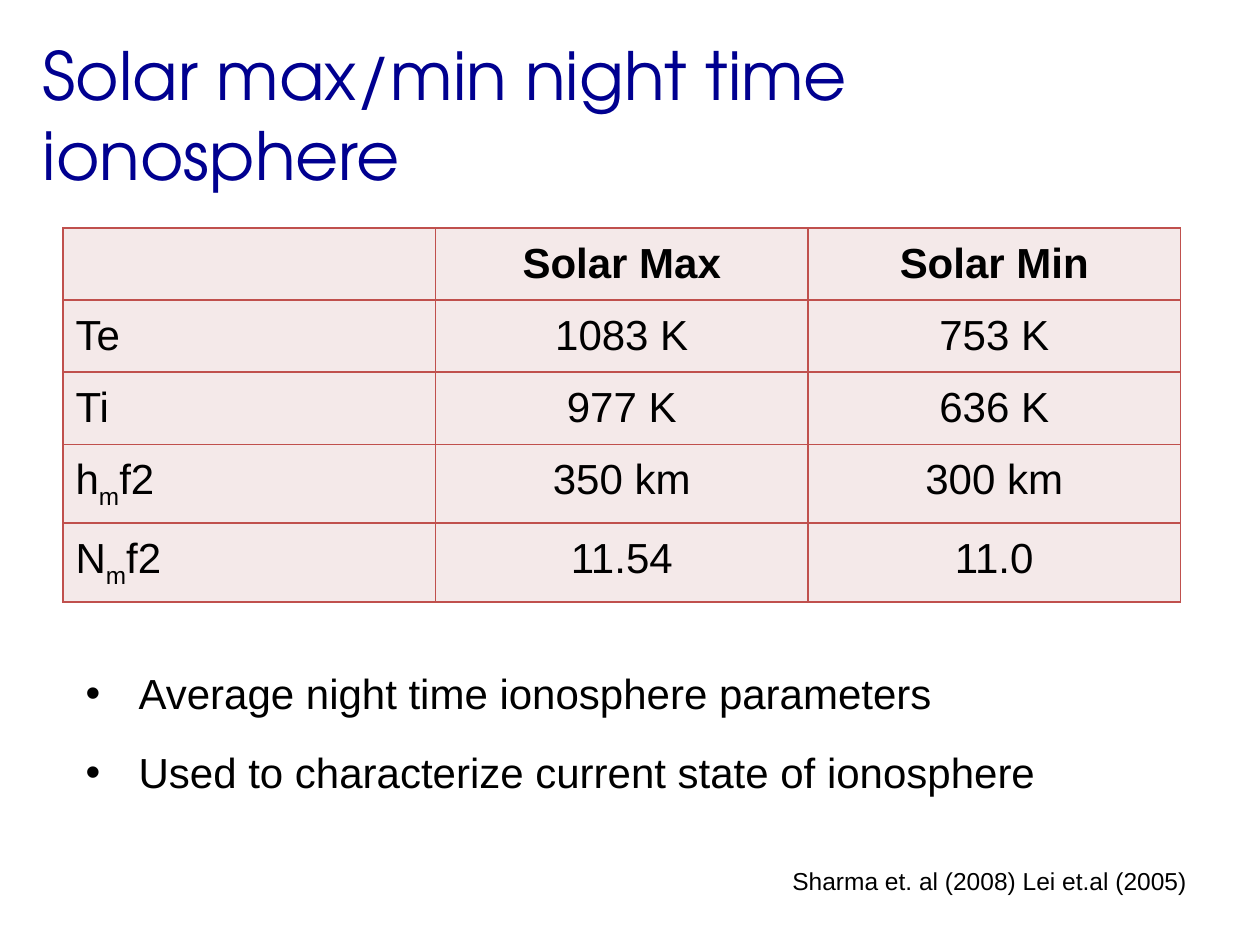
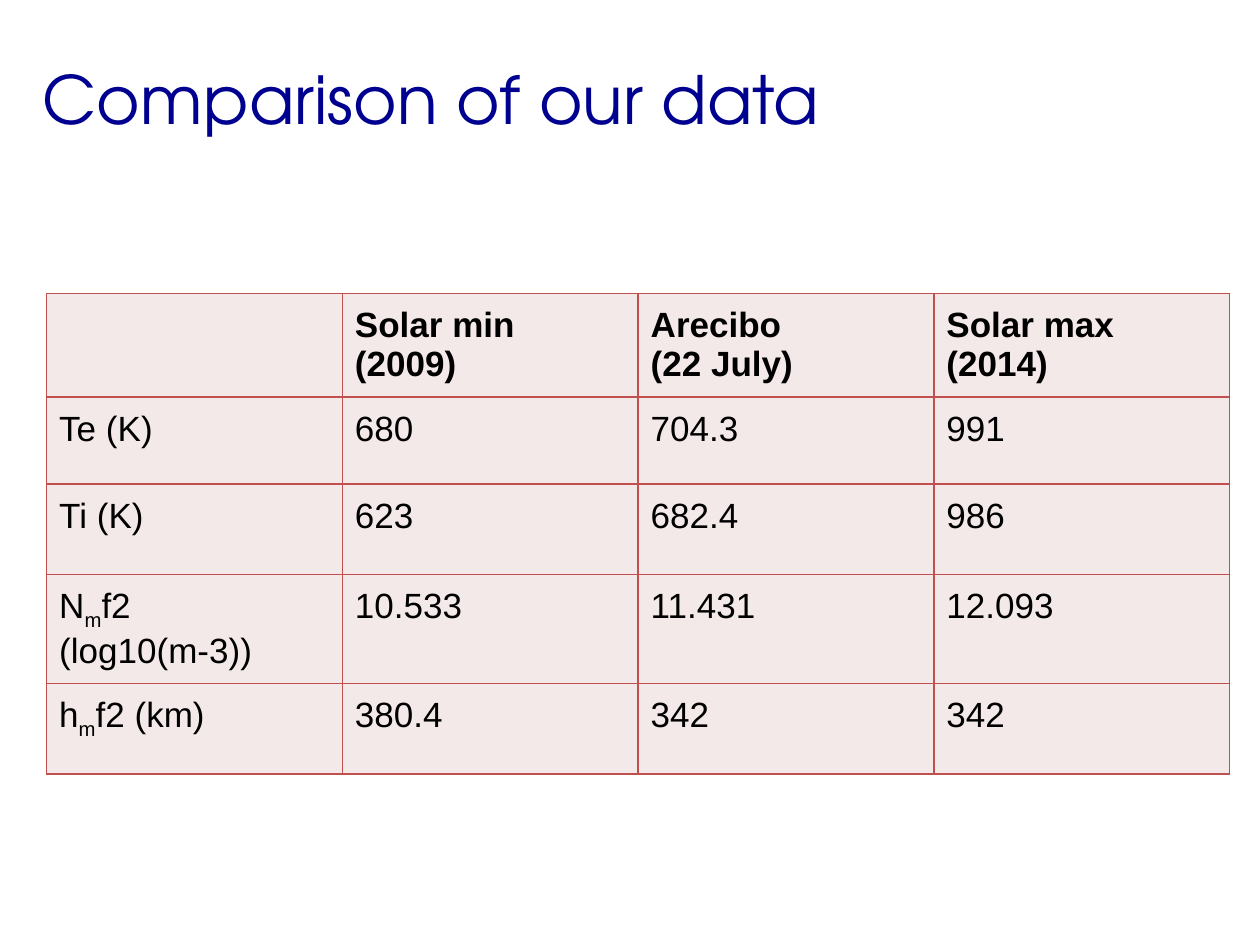
from dataclasses import dataclass

from lxml import etree
from pptx import Presentation
from pptx.dml.color import RGBColor
from pptx.enum import text as t
from pptx.oxml import ns
from pptx.util import Inches, Pt


@dataclass(frozen=True)
class Theme:
    ink: str = "000000"
    title_ink: str = "000090"
    rule: str = "C0504D"
    cell: str = "F4E9E9"
    title_font: str = "TeX Gyre Adventor"
    body_font: str = "Arial"
    title_size: int = 38
    list_size: int = 24
    note_size: int = 14
    inset: float = 0.1
    rule_width: float = 1


THEME = Theme()
LEFT, CENTER = t.PP_ALIGN.LEFT, t.PP_ALIGN.CENTER


# Shared helpers
def assign(target, values):
    for name, value in values.items():
        setattr(target, name, value)


def add_tag(parent, tag, **attributes):
    return etree.SubElement(parent, ns.qn(tag), attributes)


def place(shape, box):
    names = ("left", "top", "width", "height")
    assign(shape, dict(zip(names, map(Inches, box))))


def format_frame(frame, anchor):
    assign(frame, {"word_wrap": True, "auto_size": t.MSO_AUTO_SIZE.NONE,
                   "vertical_anchor": anchor})
    sides = ("margin_left", "margin_top", "margin_right", "margin_bottom")
    assign(frame, dict.fromkeys(sides, Inches(THEME.inset)))


def write(para, content, size, font=THEME.body_font, color=THEME.ink,
          bold=False, align=LEFT):
    """Write text in which ~x~ marks a subscript and \\n a line break."""
    para.alignment = align
    for number, line in enumerate(content.split("\n")):
        if number:
            para.add_line_break()
        for index, piece in enumerate(line.split("~")):
            span = para.add_run()
            span.text = piece
            assign(span.font, {"size": Pt(size), "name": font, "bold": bold})
            span.font.color.rgb = RGBColor.from_string(color)
            if index % 2:
                span.font._element.set("baseline", "-25000")


# Title band
def add_title(page, content, height):
    title = page.shapes.title
    place(title, (0.24, 0.19, 9.52, height))
    format_frame(title.text_frame, t.MSO_ANCHOR.MIDDLE)
    write(title.text_frame.paragraphs[0], content, THEME.title_size,
          THEME.title_font, THEME.title_ink)


# Data table
def format_cell(cell):
    properties = cell._tc.get_or_add_tcPr()
    for side in ("a:lnL", "a:lnR", "a:lnT", "a:lnB"):
        line = add_tag(properties, side, w=str(Pt(THEME.rule_width)))
        add_tag(add_tag(line, "a:solidFill"), "a:srgbClr", val=THEME.rule)
    cell.fill.solid()
    cell.fill.fore_color.rgb = RGBColor.from_string(THEME.cell)
    sides = ("margin_left", "margin_top", "margin_right", "margin_bottom")
    assign(cell, dict.fromkeys(sides, Inches(THEME.inset)))


def add_data_table(page, origin, width, heights, rows, size, align):
    columns = len(rows[0])
    box = (*origin, width, sum(heights))
    table = page.shapes.add_table(len(rows), columns, *map(Inches, box)).table
    assign(table, {"first_row": False, "horz_banding": False})
    for column in table.columns:
        column.width = Inches(width / columns)
    for row_index, (height, values) in enumerate(zip(heights, rows)):
        table.rows[row_index].height = Inches(height)
        for column_index, value in enumerate(values):
            cell = table.cell(row_index, column_index)
            format_cell(cell)
            if value:
                write(cell.text_frame.paragraphs[0], value, size,
                      bold=row_index == 0,
                      align=align if column_index else LEFT)


# Bulleted list
def add_list(page, box, items):
    body = page.placeholders[1]
    place(body, box)
    frame = body.text_frame
    format_frame(frame, t.MSO_ANCHOR.TOP)
    for index, item in enumerate(items):
        para = frame.add_paragraph() if index else frame.paragraphs[0]
        assign(para, {"line_spacing": 1.5, "space_before": Pt(2)})
        properties = para._p.get_or_add_pPr()
        properties.set("marL", str(Inches(0.5)))
        properties.set("indent", str(Inches(-0.42)))
        add_tag(add_tag(properties, "a:buClr"), "a:srgbClr", val=THEME.ink)
        add_tag(properties, "a:buFont", typeface=THEME.body_font)
        add_tag(properties, "a:buChar", char="•")
        write(para, item, THEME.list_size)


# Reference note
def add_reference(page, box, content):
    note = page.shapes.add_textbox(*map(Inches, box))
    format_frame(note.text_frame, t.MSO_ANCHOR.TOP)
    write(note.text_frame.paragraphs[0], content, THEME.note_size)


# Slides
def build_night_slide(deck):
    page = deck.slides.add_slide(deck.slide_layouts[1])
    add_title(page, "Solar max/min night time ionosphere", 1.43)
    rows = [("", "Solar Max", "Solar Min"),
            ("Te", "1083 K", "753 K"),
            ("Ti", "977 K", "636 K"),
            ("h~m~f2", "350 km", "300 km"),
            ("N~m~f2", "11.54", "11.0")]
    add_data_table(page, (0.5, 1.81), 8.87, [0.57] * 3 + [0.62] * 2, rows,
                   24, CENTER)
    add_list(page, (0.5, 5, 9, 1.49),
             ["Average night time ionosphere parameters",
              "Used to characterize current state of ionosphere"])
    add_reference(page, (6.19, 6.77, 3.56, 0.52),
                  "Sharma et. al (2008) Lei et.al (2005)")


def build_comparison_slide(deck):
    page = deck.slides.add_slide(deck.slide_layouts[5])
    add_title(page, "Comparison of our data", 1.17)
    rows = [("", "Solar min\n(2009)", "Arecibo\n(22 July)", "Solar max\n(2014)"),
            ("Te (K)", "680", "704.3", "991"),
            ("Ti (K)", "623", "682.4", "986"),
            ("N~m~f2\n(log10(m-3))", "10.533", "11.431", "12.093"),
            ("h~m~f2 (km)", "380.4", "342", "342")]
    add_data_table(page, (0.37, 2.33), 9.39, [0.82, 0.69, 0.72, 0.86, 0.72],
                   rows, 20, LEFT)


def main():
    deck = Presentation()
    assign(deck, {"slide_width": Inches(10), "slide_height": Inches(7.5)})
    build_night_slide(deck)
    build_comparison_slide(deck)
    deck.save("out.pptx")


if __name__ == "__main__":
    main()
